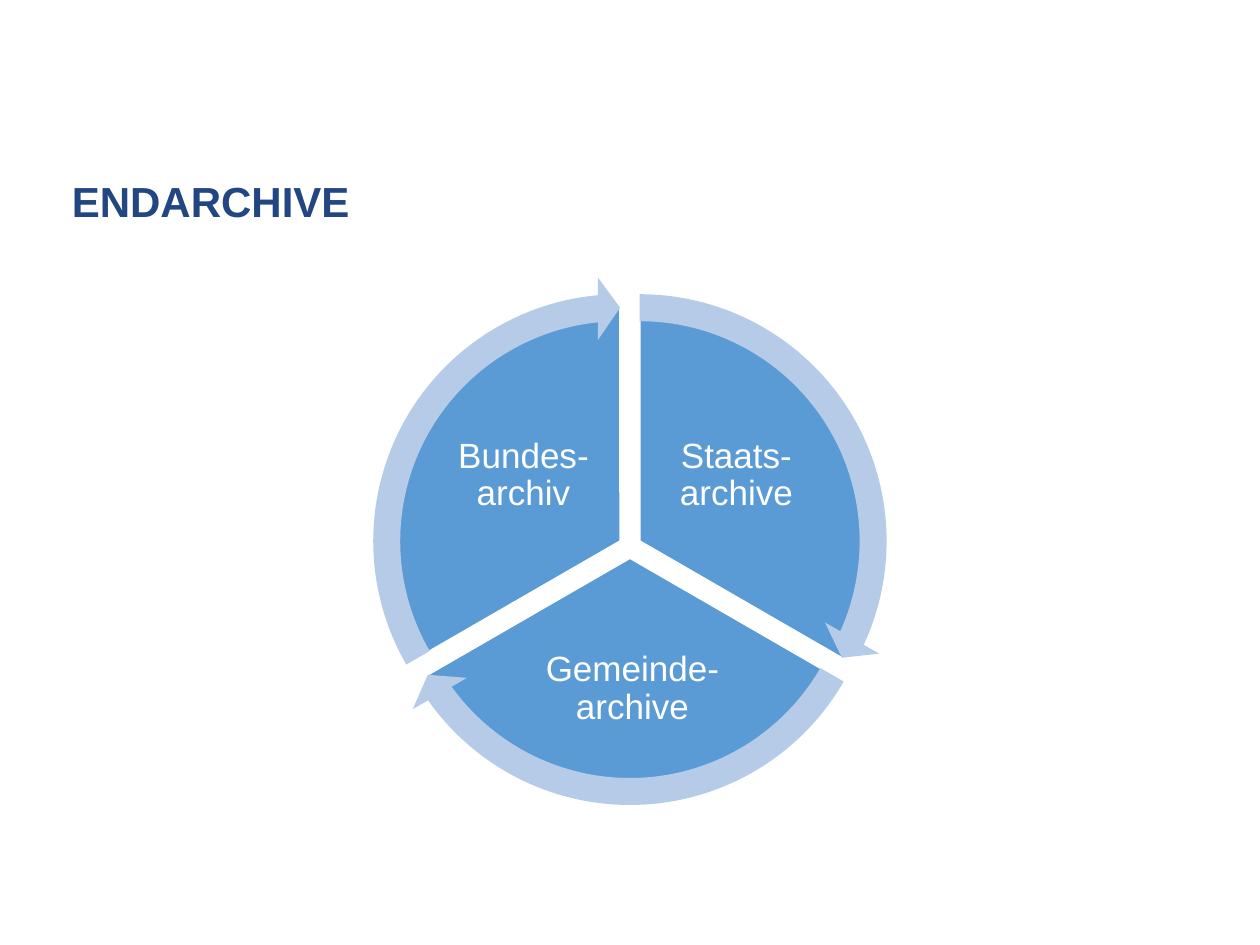
from math import cos, radians, sin

from pptx import Presentation
from pptx.dml.color import RGBColor
from pptx.enum.shapes import MSO_SHAPE
from pptx.enum.text import MSO_ANCHOR, MSO_AUTO_SIZE, PP_ALIGN
from pptx.util import Inches, Pt

NAVY, BLUE, PALE, WHITE = "224681", "5B9BD5", "B5CBE7", "FFFFFF"
CENTER_X, CENTER_Y = 5, 4.34
GAP = 0.09          # distance of each sector from the common centre
PIE_SIZE, ARROW_SIZE = 3.73, 4.2
HEAD_ANGLE = 5.46   # degrees covered by an arrowhead
UNIT = 0.6          # adjustment value per degree

# text, start angle, label box (left, top, width, height)
SECTORS = [
    ("Staats-archive", 270, (5.18, 3.22, 1.33, 1.11)),
    ("Gemeinde-archive", 30, (4.02, 4.98, 2, 0.98)),
    ("Bundes-archiv", 150, (3.49, 3.22, 1.33, 1.11)),
]


def color(hex_code):
    return RGBColor.from_string(hex_code)


def write(frame, text, size, hex_code, bold=False, align=PP_ALIGN.LEFT,
          anchor=MSO_ANCHOR.TOP):
    frame.word_wrap = True
    frame.auto_size = MSO_AUTO_SIZE.NONE
    frame.vertical_anchor = anchor
    paragraph = frame.paragraphs[0]
    paragraph.alignment = align
    paragraph.line_spacing = 0.9
    run = paragraph.add_run()
    run.text = text
    run.font.name = "Arial"
    run.font.size = Pt(size)
    run.font.bold = bold
    run.font.color.rgb = color(hex_code)


def add_round(group, preset, start, size, fill, adjustments):
    """Add a round shape, pushed outwards along the middle of its sector."""
    middle = radians(start + 60)
    left = CENTER_X + GAP * cos(middle) - size / 2
    top = CENTER_Y + GAP * sin(middle) - size / 2
    part = group.shapes.add_shape(preset, Inches(left), Inches(top),
                                  Inches(size), Inches(size))
    for index, value in enumerate(adjustments):
        part.adjustments[index] = value
    part.shadow.inherit = False
    part.fill.solid()
    part.fill.fore_color.rgb = color(fill)
    part.line.fill.background()
    return part


def add_sector(group, text, start, label_box):
    end = (start + 120) % 360
    sector = add_round(group, MSO_SHAPE.PIE, start, PIE_SIZE, BLUE,
                       (start * UNIT, end * UNIT))
    sector.line.color.rgb = color(WHITE)
    sector.line.width = Pt(1)
    label = group.shapes.add_textbox(*map(Inches, label_box)).text_frame
    label.margin_left = label.margin_right = Inches(0.03)
    label.margin_top = label.margin_bottom = Inches(0.03)
    write(label, text, 20, WHITE, align=PP_ALIGN.CENTER,
          anchor=MSO_ANCHOR.MIDDLE)


def add_cycle_arrow(group, start):
    end = (start + 120) % 360 - HEAD_ANGLE
    add_round(group, MSO_SHAPE.CIRCULAR_ARROW, start, ARROW_SIZE, PALE,
              (0.051, HEAD_ANGLE * UNIT, end * UNIT, start * UNIT, 0.059))


def main():
    prs = Presentation()
    prs.slide_width, prs.slide_height = Inches(10), Inches(7.5)
    slide = prs.slides.add_slide(prs.slide_layouts[5])

    # Title
    title = slide.shapes.title
    title.left, title.top = Inches(0.47), Inches(1.39)
    title.width, title.height = Inches(7.64), Inches(0.94)
    write(title.text_frame, "ENDARCHIVE", 24, NAVY, bold=True)

    # Cycle: sectors with labels, then the arrows over them
    cycle = slide.shapes.add_group_shape()
    for text, start, label_box in SECTORS:
        add_sector(cycle, text, start, label_box)
    for _, start, _ in SECTORS:
        add_cycle_arrow(cycle, start)

    prs.save("out.pptx")


if __name__ == "__main__":
    main()
